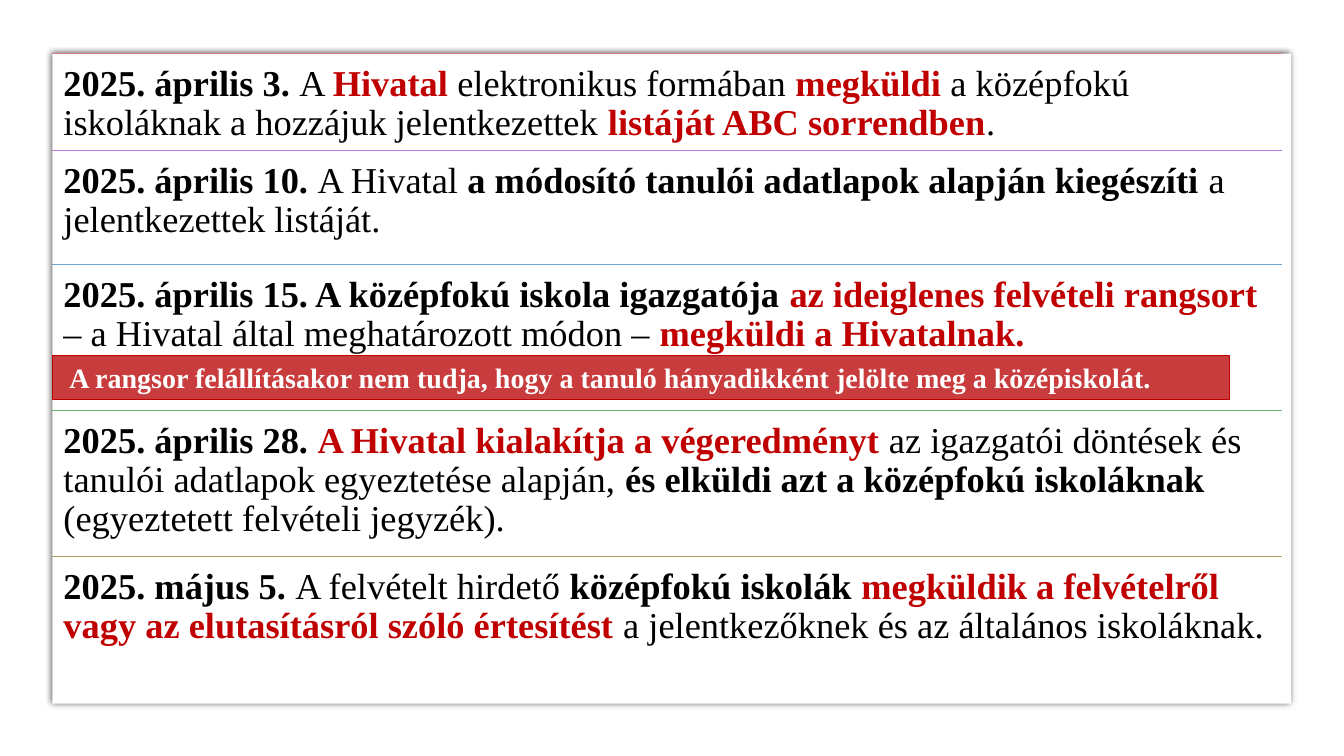
from lxml import etree
from pptx import Presentation
from pptx.dml.color import RGBColor
from pptx.enum.shapes import MSO_CONNECTOR, MSO_SHAPE
from pptx.enum.text import MSO_ANCHOR, PP_ALIGN
from pptx.oxml.ns import qn
from pptx.util import Cm, Pt

RECTANGLE = MSO_SHAPE.RECTANGLE
STRAIGHT = MSO_CONNECTOR.STRAIGHT
LEFT_ALIGN = PP_ALIGN.LEFT
TOP, MIDDLE = MSO_ANCHOR.TOP, MSO_ANCHOR.MIDDLE

WHITE = RGBColor(0xFF, 0xFF, 0xFF)
BLACK = RGBColor(0x00, 0x00, 0x00)
RED = RGBColor(0xC0, 0x00, 0x00)
BANNER_RED = RGBColor(0xC9, 0x3C, 0x3D)
ROSE = RGBColor(0xDC, 0x80, 0x81)
PURPLE = RGBColor(0xB7, 0x78, 0xD2)
BLUE = RGBColor(0x71, 0xA4, 0xC8)
GREEN = RGBColor(0x6B, 0xBC, 0x74)
SAND = RGBColor(0xAF, 0xA2, 0x66)

FONT = "Times New Roman"
PLAIN = (BLACK, False)
BOLD = (BLACK, True)
STRESSED = (RED, True)
BANNER_STYLE = (WHITE, True)

LEFT, FIRST_TOP = 1.32, 1.35
ROW_WIDTH = 30.99

# Rule colour, row height in cm, runs of text
DEADLINES = [
    (ROSE, 2.45, [
        ("2025. április 3. ", BOLD),
        ("A ", PLAIN),
        ("Hivatal", STRESSED),
        (" elektronikus formában ", PLAIN),
        ("megküldi ", STRESSED),
        ("a középfokú iskoláknak a hozzájuk jelentkezettek ", PLAIN),
        ("listáját ABC sorrendben", STRESSED),
        (".", PLAIN),
    ]),
    (PURPLE, 2.87, [
        ("2025. április 10. ", BOLD),
        ("A Hivatal ", PLAIN),
        ("a módosító tanulói adatlapok alapján kiegészíti ", BOLD),
        ("a jelentkezettek listáját.", PLAIN),
    ]),
    (BLUE, 3.68, [
        ("2025. április 15. A középfokú iskola igazgatója ", BOLD),
        ("az ideiglenes felvételi rangsort ", STRESSED),
        ("– a Hivatal által meghatározott módon – ", PLAIN),
        ("megküldi a Hivatalnak.", STRESSED),
    ]),
    (GREEN, 3.68, [
        ("2025. április 28. ", BOLD),
        ("A Hivatal kialakítja a végeredményt ", STRESSED),
        ("az igazgatói döntések és tanulói adatlapok egyeztetése alapján, ", PLAIN),
        ("és elküldi azt a középfokú iskoláknak ", BOLD),
        ("(egyeztetett felvételi jegyzék).", PLAIN),
    ]),
    (SAND, 3.68, [
        ("2025. május 5. ", BOLD),
        ("A felvételt hirdető ", PLAIN),
        ("középfokú iskolák ", BOLD),
        ("megküldik a felvételről vagy az elutasításról szóló értesítést ", STRESSED),
        ("a jelentkezőknek és az általános iskoláknak.", PLAIN),
    ]),
]
RANKING_NOTE = [(
    "A rangsor felállításakor nem tudja, hogy a tanuló hányadikként "
    "jelölte meg a középiskolát.", BANNER_STYLE)]


def write_runs(frame, runs, size):
    paragraph = frame.paragraphs[0]
    paragraph.alignment = LEFT_ALIGN
    for text, (color, bold) in runs:
        run = paragraph.add_run()
        run.text = text
        run.font.name = FONT
        run.font.size = Pt(size)
        run.font.bold = bold
        run.font.color.rgb = color
    return paragraph


def add_box(slide, top, width, height, fill):
    box = slide.shapes.add_shape(
        RECTANGLE, Cm(LEFT), Cm(top), Cm(width), Cm(height))
    box.shadow.inherit = False
    box.fill.solid()
    box.fill.fore_color.rgb = fill
    return box


def add_panel(slide):
    """Add the white sheet with a soft shadow on all sides."""
    panel = add_box(slide, FIRST_TOP, 31.22, 16.38, WHITE)
    panel.line.fill.background()
    effects = panel.element.spPr.find(qn("a:effectLst"))
    shadow = etree.SubElement(
        effects, qn("a:outerShdw"), blurRad=str(Pt(4)), dist="0", algn="ctr")
    color = etree.SubElement(shadow, qn("a:srgbClr"), val=str(BLACK))
    etree.SubElement(color, qn("a:alpha"), val="66000")


def add_rule(slide, top, color):
    rule = slide.shapes.add_connector(
        STRAIGHT, Cm(LEFT), Cm(top), Cm(LEFT + ROW_WIDTH), Cm(top))
    rule.line.color.rgb = color
    rule.line.width = Pt(0.5)
    etree.SubElement(rule.element.spPr, qn("a:effectLst"))


def add_deadline(slide, top, height, runs):
    frame = slide.shapes.add_textbox(
        Cm(LEFT), Cm(top), Cm(ROW_WIDTH), Cm(height)).text_frame
    frame.word_wrap = True
    frame.vertical_anchor = TOP
    frame.margin_left = frame.margin_right = Cm(0.28)
    frame.margin_top = frame.margin_bottom = Cm(0.28)
    write_runs(frame, runs, 26).line_spacing = 0.9


def add_banner(slide):
    banner = add_box(slide, 8.95, 29.67, 1.12, BANNER_RED)
    banner.line.color.rgb = RED
    banner.line.width = Pt(0.75)
    frame = banner.text_frame
    frame.word_wrap = True
    frame.vertical_anchor = MIDDLE
    frame.margin_left = Cm(0.43)
    write_runs(frame, RANKING_NOTE, 20)


def main():
    presentation = Presentation()
    presentation.slide_width = Cm(33.87)
    presentation.slide_height = Cm(19.05)
    blank_layout = presentation.slide_layouts[6]
    slide = presentation.slides.add_slide(blank_layout)
    slide.background.fill.solid()
    slide.background.fill.fore_color.rgb = WHITE

    add_panel(slide)
    top = FIRST_TOP
    for color, height, runs in DEADLINES:
        add_rule(slide, top, color)
        add_deadline(slide, top, height, runs)
        top += height
    add_banner(slide)
    presentation.save("out.pptx")


if __name__ == "__main__":
    main()
